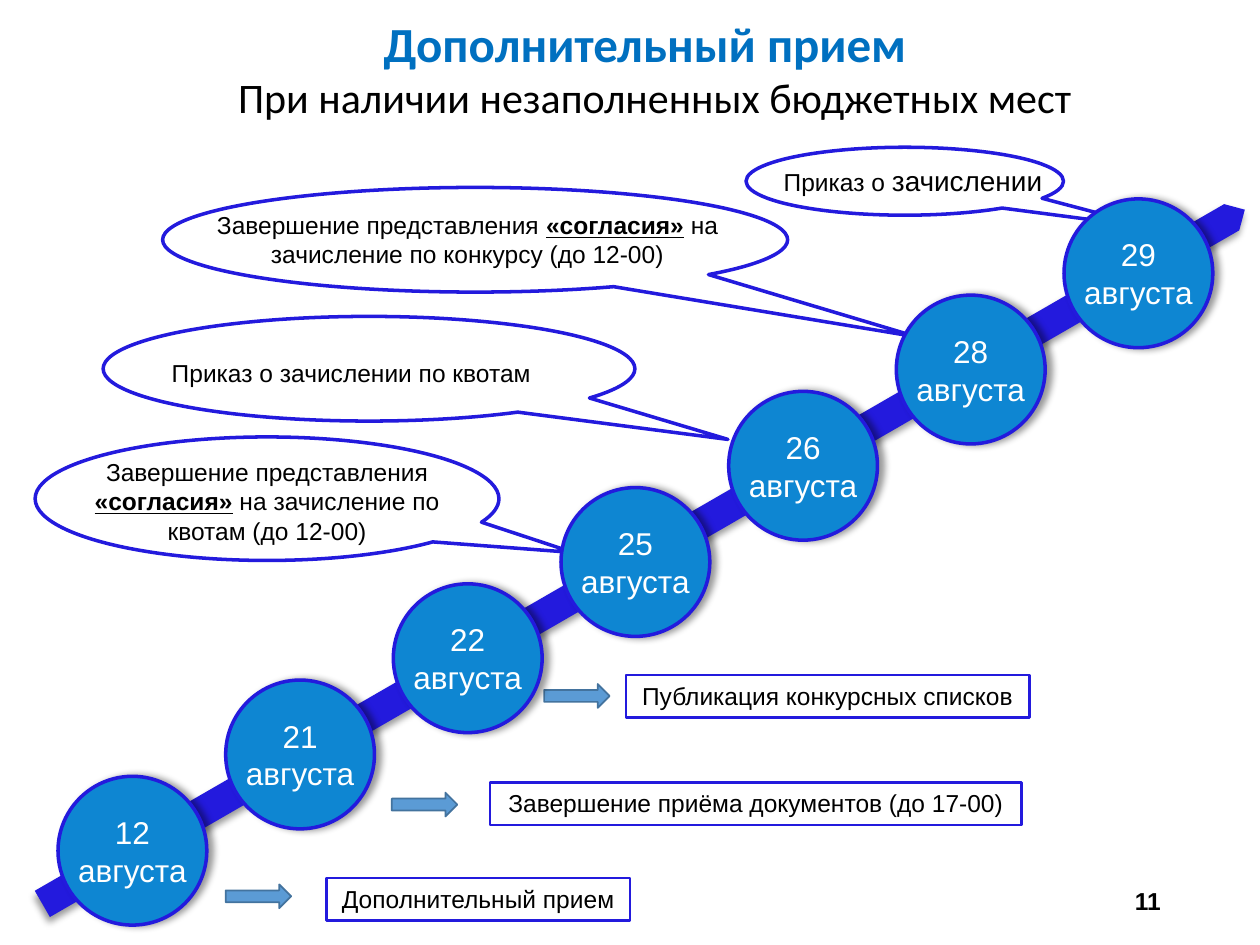
from lxml import etree
from pptx import Presentation
from pptx.dml.color import RGBColor
from pptx.enum import shapes as es, text as et
from pptx.oxml import ns
from pptx.util import Cm, Pt

BLACK = RGBColor(0, 0, 0)
WHITE = RGBColor(255, 255, 255)
TITLE = RGBColor(0x00, 0x70, 0xC0)
INDIGO = RGBColor(0x23, 0x1A, 0xDD)
DISC = RGBColor(0x0E, 0x86, 0xD2)
ARROW = RGBColor(0x5B, 0x9B, 0xD5)
EDGE = RGBColor(0x43, 0x73, 0x9E)

KIND = es.MSO_SHAPE
ALIGN = et.PP_ALIGN
MIDDLE = et.MSO_ANCHOR.MIDDLE

DAYS = [12, 21, 22, 25, 26, 28, 29]
STEPS = [
    ("Дополнительный прием", (6.58, 17.7, 6.12, 0.86), (4.55, 17.83)),
    ("Завершение приёма документов (до 17-00)", (9.88, 15.77, 10.72, 0.86), (7.9, 15.98)),
    ("Публикация конкурсных списков", (12.62, 13.61, 8.13, 0.86), (10.97, 13.79)),
]
AGREE = ("«согласия»", {"bold": True, "underline": True})
START = ("Завершение представления ", {})
BUBBLES = [
    ((15.04, 2.97, 6.4, 1.37), (0.787, 0.688), (15.19, 3.18, 6.43, 0.94),
     [("Приказ о ", {}), ("зачислении", {"size": Pt(16)})]),
    ((3.28, 3.78, 12.6, 2.11), (0.707, 0.928), (3.86, 4.11, 11.13, 1.45),
     [START, AGREE, (" на зачисление по конкурсу (до 12-00)", {})]),
    ((2.08, 6.38, 10.72, 2.11), (0.675, 0.675), (2.36, 7.09, 9.45, 0.86),
     [("Приказ о зачислении по квотам", {})]),
    ((0.71, 8.81, 9.35, 2.49), (0.66, 0.435), (1.27, 9.09, 8.23, 2.06),
     [START, AGREE, (" на зачисление по квотам (до 12-00)", {})]),
]


def style(para, size=14, color=BLACK, name="Arial", bold=False, align=ALIGN.CENTER):
    para.alignment = align
    font = para.font
    font.size, font.name, font.bold = Pt(size), name, bold
    font.color.rgb = color


def form(slide, kind, place, fill=None, line=None, width=2):
    shape = slide.shapes.add_shape(kind, *map(Cm, place))
    shape.shadow.inherit = False
    if fill is None:
        shape.fill.background()
    else:
        shape.fill.solid()
        shape.fill.fore_color.rgb = fill
    if line is None:
        shape.line.fill.background()
    else:
        shape.line.color.rgb = line
        shape.line.width = Pt(width)
    return shape


def shade(shape, angle):
    effects = shape.element.spPr.find(ns.qn("a:effectLst"))
    outer = etree.SubElement(
        effects, ns.qn("a:outerShdw"), blurRad=str(Pt(4)), dist=str(Pt(3)),
        dir=str(angle * 60000), algn="ctr", rotWithShape="0")
    color = etree.SubElement(outer, ns.qn("a:srgbClr"), val=str(BLACK))
    etree.SubElement(color, ns.qn("a:alpha"), val="40000")


def label(slide, place, parts, wrap=True, **look):
    frame = slide.shapes.add_textbox(*map(Cm, place)).text_frame
    frame.word_wrap = wrap
    para = frame.paragraphs[0]
    style(para, **look)
    for words, extra in parts:
        run = para.add_run()
        run.text = words
        for key, value in extra.items():
            setattr(run.font, key, value)
    return frame


def step(slide, words, place, spot):
    frame = form(slide, KIND.RECTANGLE, place, line=INDIGO, width=1.5).text_frame
    frame.text = words
    frame.vertical_anchor = et.MSO_ANCHOR.TOP
    style(frame.paragraphs[0])
    form(slide, KIND.RIGHT_ARROW, (*spot, 1.32, 0.48), ARROW, EDGE, 1)


def bubble(slide, place, tail, area, parts):
    shape = form(slide, KIND.OVAL_CALLOUT, place, line=INDIGO)
    for index, value in enumerate(tail):
        shape.adjustments[index] = value
    label(slide, area, parts)


def disc(slide, index, day):
    place = (1.17 + 3.38 * index, 15.65 - 1.94 * index, 3, 3)
    shape = form(slide, KIND.OVAL, place, DISC, INDIGO)
    shade(shape, 0)
    frame = shape.text_frame
    frame.text = f"{day}\nавгуста"
    frame.word_wrap = False
    frame.vertical_anchor = MIDDLE
    for para in frame.paragraphs:
        style(para, 18, WHITE)


def main():
    deck = Presentation()
    deck.slide_width, deck.slide_height = Cm(25.4), Cm(19.05)
    slide = deck.slides.add_slide(deck.slide_layouts[6])

    label(slide, (7.42, 0.15, 11.15, 1.45), [("Дополнительный прием", {})],
          wrap=False, size=28, color=TITLE, name="Calibri", bold=True)
    label(slide, (4.55, 1.32, 17.48, 1.27),
          [("При наличии незаполненных бюджетных мест", {})],
          wrap=False, size=24, name="Calibri", align=ALIGN.LEFT)
    for item in STEPS:
        step(slide, *item)
    for item in BUBBLES:
        bubble(slide, *item)

    road = form(slide, KIND.PENTAGON, (-1.02, 10.92, 27.99, 0.61), INDIGO)
    road.rotation = 330
    shade(road, 90)
    for index, day in enumerate(DAYS):
        disc(slide, index, day)

    page = label(slide, (17.93, 17.65, 5.72, 1.02), [("11", {})],
                 bold=True, align=ALIGN.RIGHT)
    page.vertical_anchor = MIDDLE
    deck.save("out.pptx")


if __name__ == "__main__":
    main()
